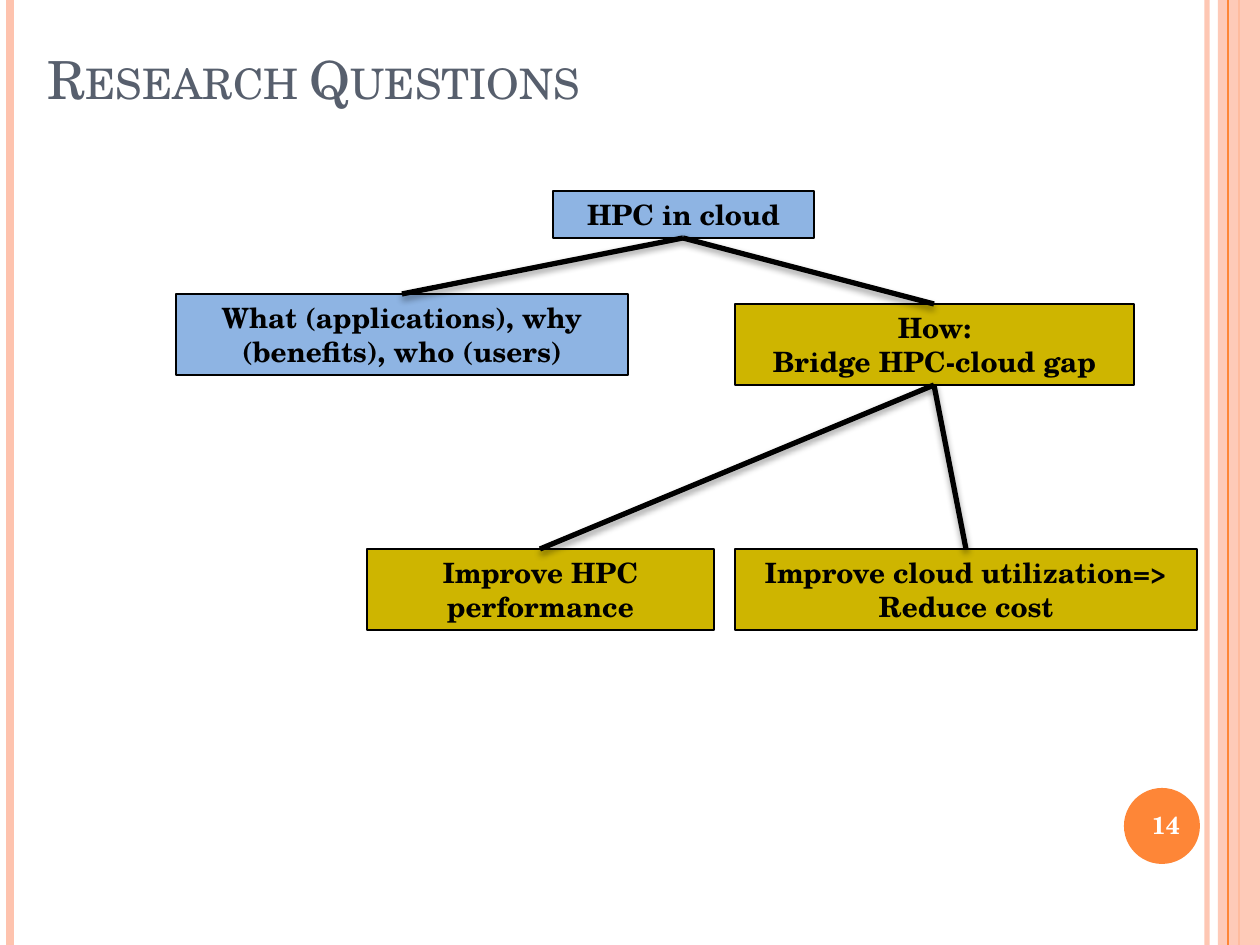
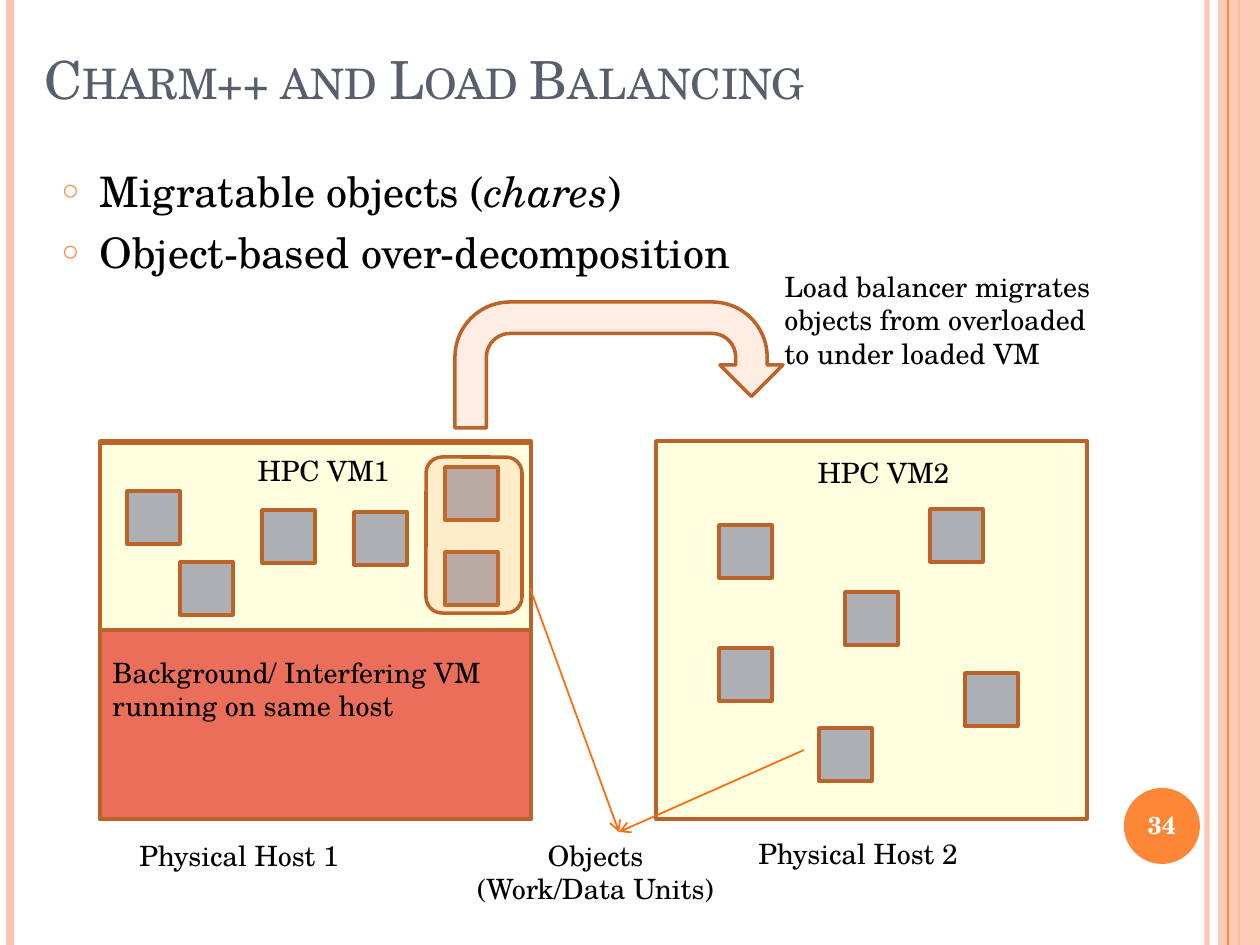
from lxml.etree import SubElement
from pptx import Presentation
from pptx.dml.color import RGBColor
from pptx.enum.shapes import MSO_CONNECTOR, MSO_SHAPE as SHAPE
from pptx.enum.text import MSO_ANCHOR as ANCHOR, MSO_AUTO_SIZE, PP_ALIGN as ALIGN
from pptx.oxml.ns import qn
from pptx.util import Emu, Pt

PX = 914400 / 126
FONT = "TeX Gyre Schola"
COLORS = {
    "title": "575F6D", "black": "000000", "white": "FFFFFF",
    "band": "FEC3AE", "orange": "FE8637", "arrow": "FF6B0A",
    "blue": "8EB4E3", "gold": "CEB500", "outline": "BC6329",
    "yellow": "FFFF00", "red": "EB6E5A", "tile": "ADB0B5",
}


def write(shape, text, size=16, color="black", bold=False, align=ALIGN.LEFT,
          anchor=ANCHOR.TOP, small_caps=False, space_before=0):
    frame = shape.text_frame
    frame.word_wrap = True
    frame.auto_size = MSO_AUTO_SIZE.NONE
    frame.vertical_anchor = anchor
    for index, line in enumerate(text.split("\n")):
        paragraph = frame.add_paragraph() if index else frame.paragraphs[0]
        paragraph.alignment = align
        paragraph.space_before = Pt(space_before)
        for position, part in enumerate(line.split("*")):
            run = paragraph.add_run()
            run.text = part
            run.font.name = FONT
            run.font.size = Pt(size)
            run.font.bold = bold
            run.font.italic = position % 2 == 1
            run.font.color.rgb = RGBColor.from_string(COLORS[color])
            if small_caps:
                run._r.get_or_add_rPr().set("cap", "small")


def draw(slide, preset, box, fill=None, line=None, weight=2, alpha=None,
         shadow=False, arrow=False):
    left, top, width, height = [Emu(round(value * PX)) for value in box]
    if preset is None:
        shape = slide.shapes.add_connector(
            MSO_CONNECTOR.STRAIGHT, left, top, left + width, top + height)
    else:
        shape = slide.shapes.add_shape(preset, left, top, width, height)
        if fill:
            shape.fill.solid()
            shape.fill.fore_color.rgb = RGBColor.from_string(COLORS[fill])
        else:
            shape.fill.background()
    if line:
        shape.line.color.rgb = RGBColor.from_string(COLORS[line])
        shape.line.width = Pt(weight)
    else:
        shape.line.fill.background()
    properties = shape._element.spPr
    if alpha:
        color = next(properties.iter(qn("a:srgbClr")))
        SubElement(color, qn("a:alpha"), val=str(alpha * 1000))
    if arrow:
        SubElement(properties.find(qn("a:ln")), qn("a:tailEnd"), type="arrow")
    effects = SubElement(properties, qn("a:effectLst"))
    if shadow:
        outer = SubElement(effects, qn("a:outerShdw"), blurRad=str(Pt(4)),
                           dist=str(Pt(2)), dir="5400000", rotWithShape="0")
        color = SubElement(outer, qn("a:srgbClr"), val=COLORS["black"])
        SubElement(color, qn("a:alpha"), val="40000")
    return shape


presentation = Presentation()
presentation.slide_width = Emu(round(1260 * PX))
presentation.slide_height = Emu(round(945 * PX))

slides = []
for layout, title, title_box, number, number_left in [
    (5, "Research Questions", (35, -10, 1109, 126), "14", 1124),
    (1, "Charm++ and Load Balancing", (32, -42, 1218, 158), "34", 1120),
]:
    slide = presentation.slides.add_slide(presentation.slide_layouts[layout])
    slides.append(slide)
    for x, color, weight, alpha in [(1207, "band", 3, 93), (10, "band", 4.5, None),
                                    (1239, "orange", 1.5, None)]:
        draw(slide, None, (x, 0, 0, 945), line=color, weight=weight, alpha=alpha)
    draw(slide, SHAPE.RECTANGLE, (1218, 0, 42, 945), fill="band", alpha=87)
    draw(slide, None, (1228, 0, 0, 945), line="orange", weight=0.75)
    draw(slide, SHAPE.OVAL, (1124, 788, 76, 76), fill="orange")

    heading = slide.shapes.title
    heading.left, heading.top, heading.width, heading.height = [
        Emu(round(value * PX)) for value in title_box]
    write(heading, title, size=30, color="title", anchor=ANCHOR.BOTTOM, small_caps=True)
    page_number = draw(slide, SHAPE.RECTANGLE, (number_left, 789, 84, 72))
    write(page_number, number, size=14, color="white", bold=True,
          align=ALIGN.CENTER, anchor=ANCHOR.MIDDLE)

questions, balancing = slides

nodes = {
    "root": ("HPC in cloud", "blue", (553, 191, 261, 47)),
    "what": ("What (applications), why (benefits), who (users)", "blue", (176, 294, 452, 81)),
    "how": ("How:\nBridge HPC-cloud gap", "gold", (735, 304, 399, 81)),
    "performance": ("Improve HPC performance", "gold", (367, 549, 347, 81)),
    "utilization": ("Improve cloud utilization=> Reduce cost", "gold", (735, 549, 462, 81)),
}
for text, fill, box in nodes.values():
    node = draw(questions, SHAPE.RECTANGLE, box, fill=fill, line="black", weight=0.75)
    write(node, text, bold=True, align=ALIGN.CENTER, anchor=ANCHOR.MIDDLE)

for parent, child in [("root", "what"), ("root", "how"),
                      ("how", "performance"), ("how", "utilization")]:
    left, top, width, height = nodes[parent][2]
    child_left, child_top, child_width, _ = nodes[child][2]
    start_x, start_y = left + width // 2, top + height
    draw(questions, None,
         (start_x, start_y, child_left + child_width // 2 - start_x, child_top - start_y),
         line="black", weight=3, shadow=True)

body = balancing.placeholders[1]
body.left, body.top, body.width, body.height = [
    Emu(round(value * PX)) for value in (49, 159, 1029, 672)]
write(body, "Migratable objects (*chares*)\nObject-based over-decomposition",
      size=24, space_before=6)
for paragraph in body.text_frame.paragraphs:
    bullet = paragraph._p.get_or_add_pPr()
    indent = round(38 * PX)
    bullet.set("marL", str(indent))
    bullet.set("indent", str(-indent))
    SubElement(SubElement(bullet, qn("a:buClr")), qn("a:srgbClr"), val=COLORS["orange"])
    SubElement(bullet, qn("a:buSzPct"), val="70000")
    SubElement(bullet, qn("a:buChar"), char="○")

for box, fill, alpha in [
    ((100, 443, 431, 189), "yellow", 12),
    ((100, 441, 431, 378), None, None),
    ((656, 441, 431, 378), "yellow", 12),
    ((100, 630, 431, 189), "red", None),
]:
    draw(balancing, SHAPE.RECTANGLE, box, fill=fill, line="outline", alpha=alpha)

vm1_tiles = [(127, 491), (180, 562), (262, 510), (354, 512), (445, 467), (445, 552)]
vm2_tiles = [(719, 525), (719, 648), (845, 592), (930, 509), (965, 673), (819, 728)]
for x, y in vm1_tiles + vm2_tiles:
    draw(balancing, SHAPE.RECTANGLE, (x, y, 53, 53), fill="tile", line="outline")

for preset, box in [(SHAPE.ROUNDED_RECTANGLE, (426, 457, 96, 156)),
                    (SHAPE.U_TURN_ARROW, (455, 302, 328, 126))]:
    draw(balancing, preset, box, fill="orange", line="outline", alpha=14)

objects_x, objects_y = 619, 832
for x, y in [(530, 588), (804, 750)]:
    draw(balancing, None, (x, y, objects_x - x, objects_y - y),
         line="arrow", weight=1, arrow=True)

for text, box, align in [
    ("Background/ Interfering VM running on same host", (100, 649, 464, 81), ALIGN.LEFT),
    ("Objects\n(Work/Data Units)", (384, 832, 423, 81), ALIGN.CENTER),
    ("Load balancer migrates objects from overloaded\nto under loaded VM",
     (772, 263, 367, 115), ALIGN.LEFT),
    ("Physical Host 1", (127, 832, 375, 47), ALIGN.LEFT),
    ("Physical Host 2", (746, 830, 341, 47), ALIGN.LEFT),
    ("HPC VM1", (192, 447, 263, 47), ALIGN.CENTER),
    ("HPC VM2", (752, 449, 263, 47), ALIGN.CENTER),
]:
    label = balancing.shapes.add_textbox(*[Emu(round(value * PX)) for value in box])
    write(label, text, align=align)

presentation.save("out.pptx")
